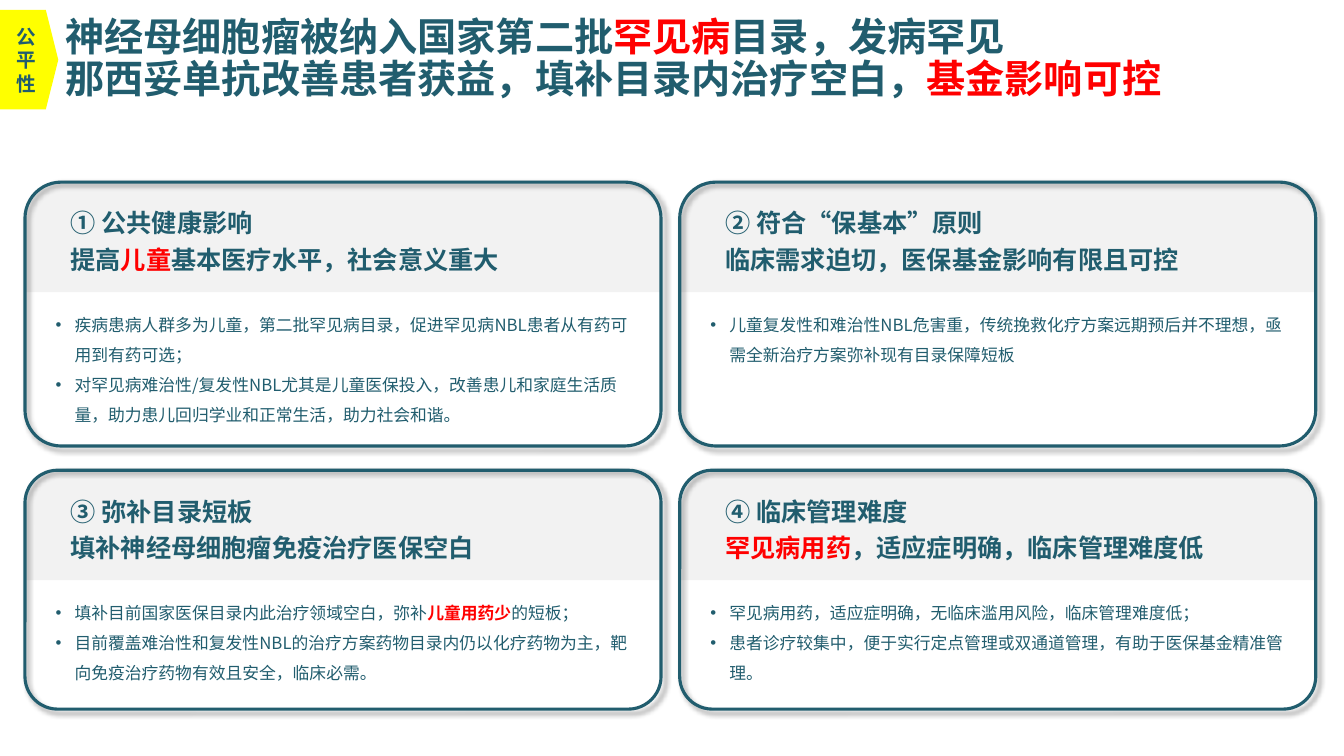
import pptx
import pptx.dml.color
import pptx.enum.shapes
import pptx.enum.text
import pptx.oxml
import pptx.oxml.ns
import pptx.util
from pptx.util import Cm

COLORS = {"teal": "215D6E", "red": "FF0000", "yellow": "FFFF00", "grey": "F2F2F2", "black": "000000"}
CJK = "Noto Sans CJK SC"
SHAPES = pptx.enum.shapes.MSO_SHAPE
MIDDLE = pptx.enum.text.MSO_ANCHOR.MIDDLE
CENTER = pptx.enum.text.PP_ALIGN.CENTER

TITLE = "神经母细胞瘤被纳入国家第二批*罕见病*目录，发病罕见\n那西妥单抗改善患者获益，填补目录内治疗空白，*基金影响可控*"
CARDS = [
    (["① 公共健康影响", "提高*儿童*基本医疗水平，社会意义重大"],
     ["疾病患病人群多为儿童，第二批罕见病目录，促进罕见病NBL患者从有药可用到有药可选；",
      "对罕见病难治性/复发性NBL尤其是儿童医保投入，改善患儿和家庭生活质量，助力患儿回归学业和正常生活，助力社会和谐。"]),
    (["② 符合“保基本”原则", "临床需求迫切，医保基金影响有限且可控"],
     ["儿童复发性和难治性NBL危害重，传统挽救化疗方案远期预后并不理想，亟需全新治疗方案弥补现有目录保障短板"]),
    (["③ 弥补目录短板", "填补神经母细胞瘤免疫治疗医保空白"],
     ["填补目前国家医保目录内此治疗领域空白，弥补*儿童用药少*的短板；",
      "目前覆盖难治性和复发性NBL的治疗方案药物目录内仍以化疗药物为主，靶向免疫治疗药物有效且安全，临床必需。"]),
    (["④ 临床管理难度", "*罕见病用药*，适应症明确，临床管理难度低"],
     ["罕见病用药，适应症明确，无临床滥用风险，临床管理难度低；",
      "患者诊疗较集中，便于实行定点管理或双通道管理，有助于医保基金精准管理。"]),
]


def rgb(name):
    """Return the palette colour of that name."""
    return pptx.dml.color.RGBColor.from_string(COLORS[name])


def xml(tag, attributes="", inner=""):
    """Build a DrawingML element."""
    return pptx.oxml.parse_xml(f'<a:{tag} {pptx.oxml.ns.nsdecls("a")} {attributes}>{inner}</a:{tag}>')


def write(frame, paragraphs, size, font=CJK, bold=True, spacing=1.0, align=None, anchor=None, bullets=False):
    """Fill a text frame; stretches between asterisks become bold red."""
    frame.word_wrap = True
    if anchor is not None:
        frame.vertical_anchor = anchor
    for index, text in enumerate(paragraphs):
        paragraph = frame.add_paragraph() if index else frame.paragraphs[0]
        paragraph.line_spacing = spacing
        paragraph.alignment = align
        if bullets:
            properties = paragraph._p.get_or_add_pPr()
            properties.set("marL", str(Cm(0.48)))
            properties.set("indent", str(-Cm(0.48)))
            properties.append(xml("buFont", 'typeface="Arial"'))
            properties.append(xml("buChar", 'char="•"'))
        for part, stretch in enumerate(text.split("*")):
            for number, line in enumerate(stretch.split("\n")):
                if number:
                    paragraph.add_line_break()
                if not line:
                    continue
                run = paragraph.add_run()
                run.text = line
                run.font.size = pptx.util.Pt(size)
                run.font.name = font
                run.font.bold = bold or part % 2 == 1
                run.font.color.rgb = rgb("red" if part % 2 else "teal")
                run.font._element.find(pptx.oxml.ns.qn("a:latin")).addnext(
                    xml("ea", f'typeface="{CJK}"'))


def add_panel(slide, kind, box, adjustments, fill=None):
    """Add a preset shape without outline or shadow."""
    panel = slide.shapes.add_shape(kind, *map(Cm, box))
    for index, value in enumerate(adjustments):
        panel.adjustments[index] = value
    panel.shadow.inherit = False
    panel.line.fill.background()
    if fill:
        panel.fill.solid()
        panel.fill.fore_color.rgb = rgb(fill)
    else:
        panel.fill.background()
    return panel


def add_heading(slide, left, top, width, height):
    """Place the criterion tag and the slide title in the given box."""
    tag = add_panel(slide, SHAPES.PENTAGON, (left, top, 1.47, height), [0.214], "yellow")
    write(tag.text_frame, ["公平性"], 14, align=CENTER, anchor=MIDDLE)
    title = slide.shapes.add_textbox(Cm(left + 1.4), Cm(top + 0.13), Cm(width - 1.4), Cm(2.24))
    write(title.text_frame, [TITLE], 28, font="Arial", spacing=0.9, anchor=MIDDLE)


def add_card(slide, left, top, width, height, headline, points):
    """Place one rounded card with its headline band and bullet points."""
    add_panel(slide, SHAPES.ROUND_2_SAME_RECTANGLE, (left, top - 0.05, width - 0.03, 2.82), [0.37, 0], "grey")
    border = add_panel(slide, SHAPES.ROUNDED_RECTANGLE, (left, top, width, height), [0.137])
    border.line.color.rgb = rgb("teal")
    border.line.width = pptx.util.Pt(2.25)
    shade = f'<a:srgbClr val="{COLORS["black"]}"><a:alpha val="40000"/></a:srgbClr>'
    border._element.spPr.find(pptx.oxml.ns.qn("a:effectLst")).append(
        xml("outerShdw", 'blurRad="50800" dist="38100" dir="2700000" algn="tl" rotWithShape="0"', shade))
    details = slide.shapes.add_textbox(Cm(left + 0.52), Cm(top + 2.95), Cm(width - 1.04), Cm(height - 3.4))
    write(details.text_frame, points, 12, bold=False, spacing=1.5, bullets=True)
    banner = slide.shapes.add_textbox(Cm(left + 0.9), Cm(top + 0.37), Cm(13.46), Cm(2.16))
    write(banner.text_frame, headline, 18, spacing=1.2)


def main():
    """Build and save the slide."""
    deck = pptx.Presentation()
    deck.slide_width, deck.slide_height = Cm(33.87), Cm(19.05)
    slide = deck.slides.add_slide(deck.slide_layouts[6])
    add_heading(slide, 0, 0.25, 33, 2.51)
    for index, (headline, points) in enumerate(CARDS):
        row, column = divmod(index, 2)
        add_card(slide, 0.63 + column * 16.5, 4.59 + row * 7.26, 16.03, (6.65, 6.02)[row], headline, points)
    deck.save("out.pptx")


if __name__ == "__main__":
    main()
